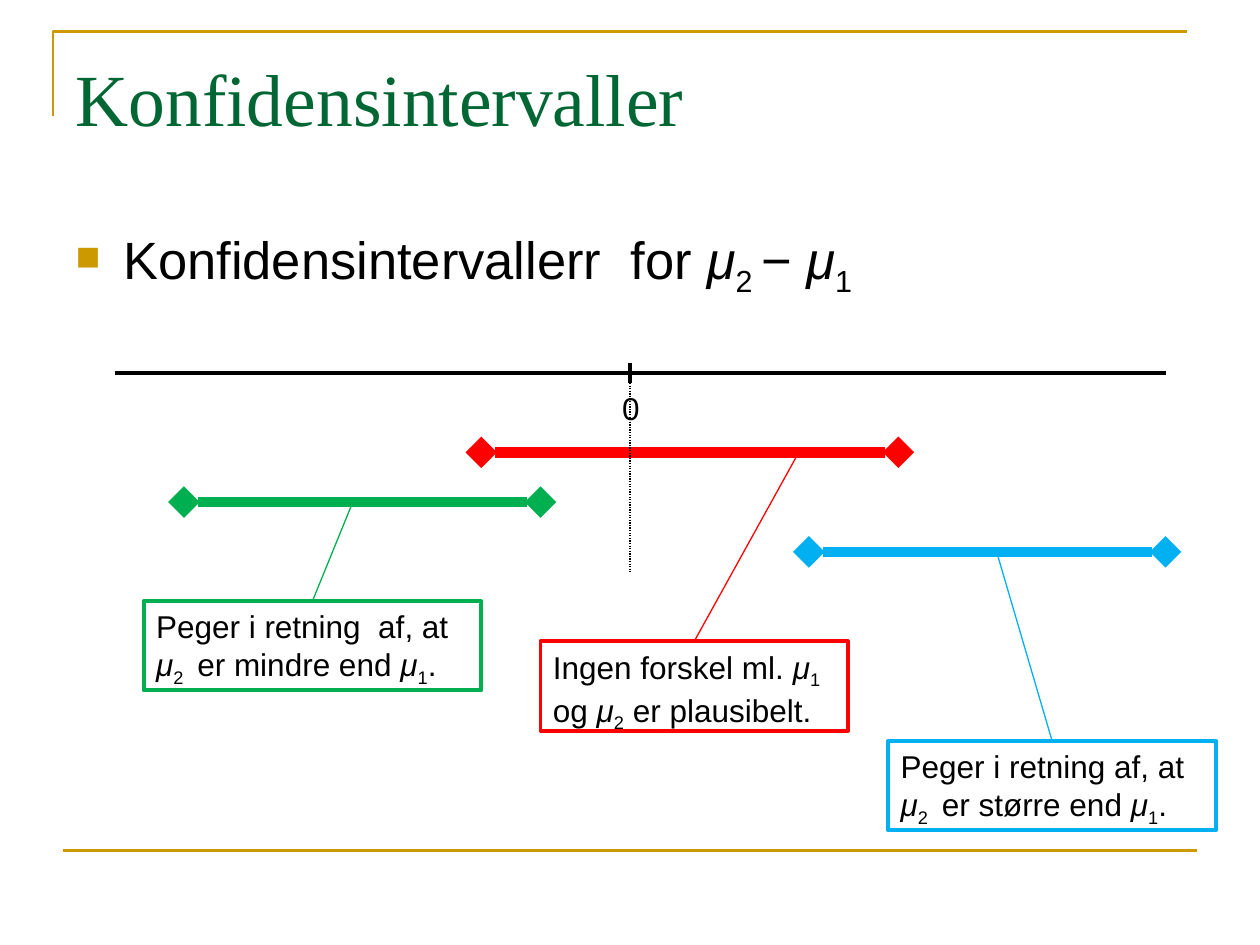
from dataclasses import dataclass

import pptx
import pptx.util
import pptx.dml.color
import pptx.enum.dml
import pptx.enum.shapes
import pptx.enum.text
import pptx.oxml
from pptx.oxml.ns import qn


@dataclass(frozen=True)
class Theme:
    gold: str = "CC9900"
    title: str = "006633"
    ink: str = "000000"
    red: str = "FF0000"
    green: str = "00B050"
    blue: str = "00B0F0"
    title_font: str = "Times New Roman"
    body_font: str = "Arial"
    title_size: int = 42
    bullet_size: int = 30
    label_size: int = 18
    thin: float = 0.75
    rule: float = 1.5
    outline: float = 2.25
    interval: float = 6


THEME = Theme()
WIDTH, HEIGHT = 10, 7.5
MARGIN = 0.05 * WIDTH
AXIS_LEFT, AXIS_RIGHT, AXIS_Y = 0.91, 9.25, 2.96
ZERO_X, TICK = 0.5 * WIDTH, 0.08
FIRST_ROW, ROW_STEP = 3.59, 0.395
BOX_HEIGHT = 0.71

TITLE = "Konfidensintervaller"
MU = ("μ", "italic")
BULLET = [("Konfidensintervallerr  for ", ""), MU, ("2 ", "sub"),
          ("− ", ""), MU, ("1", "sub")]

# One row each: colour, interval ends, leader foot, box left, top, width, text
INTERVALS = [
    (THEME.red, 3.82, 7.13, 6.34, 4.29, 5.09, 2.44,
     [("Ingen forskel ml. ", ""), MU, ("1 ", "sub"), ("og ", ""), MU,
      ("2", "sub"), (" er plausibelt.", "")]),
    (THEME.green, 1.46, 4.29, 2.8, 1.14, 4.77, 2.68,
     [("Peger i retning  af, at ", ""), MU, ("2 ", "sub"),
      (" er mindre end ", ""), MU, ("1", "sub"), (".", "")]),
    (THEME.blue, 6.42, 9.25, 7.91, 7.05, 5.88, 2.6,
     [("Peger i retning af, at ", ""), MU, ("2 ", "sub"),
      (" er større end ", ""), MU, ("1", "sub"), (".", "")]),
]


def inches(*values):
    return [pptx.util.Inches(value) for value in values]


def rgb(colour):
    return pptx.dml.color.RGBColor.from_string(colour)


def format_span(span, size, colour=THEME.ink, font=THEME.body_font):
    span.font.size = pptx.util.Pt(size)
    span.font.name = font
    span.font.color.rgb = rgb(colour)


def write_spans(para, pieces, size):
    """Fill a paragraph with (text, style) pieces, style italic, sub or plain."""
    para.alignment = pptx.enum.text.PP_ALIGN.LEFT
    for text, style in pieces:
        span = para.add_run()
        span.text = text
        format_span(span, size)
        span.font.italic = style == "italic"
        if style == "sub":
            span._r.get_or_add_rPr().set("baseline", "-25000")


def add_line(slide, start, end, colour, width, dash=None, diamonds=False):
    line = slide.shapes.add_connector(
        pptx.enum.shapes.MSO_CONNECTOR.STRAIGHT, *inches(*start, *end))
    line.line.color.rgb = rgb(colour)
    line.line.width = pptx.util.Pt(width)
    if dash:
        line.line.dash_style = dash
    if diamonds:
        for tag in ("a:headEnd", "a:tailEnd"):
            pptx.oxml.xmlchemy.OxmlElement(tag)
            marker = pptx.oxml.xmlchemy.OxmlElement(tag)
            marker.set("type", "diamond")
            line.line._get_or_add_ln().append(marker)
    line._element.spPr.append(pptx.oxml.xmlchemy.OxmlElement("a:effectLst"))
    return line


def add_frame(slide):
    builder = slide.shapes.build_freeform(*inches(0.42, 0.92), scale=1.0)
    builder.add_line_segments(
        [inches(0.42, 0.25), inches(9.42, 0.25)], close=False)
    corner = builder.convert_to_shape()
    corner.shadow.inherit = False
    corner.fill.background()
    corner.line.color.rgb = rgb(THEME.gold)
    corner.line.width = pptx.util.Pt(THEME.rule)
    bottom = 0.9 * HEIGHT
    add_line(slide, (MARGIN, bottom), (WIDTH - MARGIN, bottom),
             THEME.gold, THEME.rule)


def add_title(slide):
    title = slide.shapes.title
    title.left, title.top, title.width, title.height = inches(
        MARGIN, 0.3, WIDTH - 2 * MARGIN, 1.25)
    frame = title.text_frame
    frame.text = TITLE
    frame.vertical_anchor = pptx.enum.text.MSO_ANCHOR.TOP
    frame.margin_top = pptx.util.Inches(0.12)
    para = frame.paragraphs[0]
    para.alignment = pptx.enum.text.PP_ALIGN.LEFT
    format_span(para.runs[0], THEME.title_size, THEME.title, THEME.title_font)


def add_bullet(slide):
    box = slide.shapes.add_textbox(
        *inches(MARGIN, 1.75, WIDTH - 2 * MARGIN, 4.95))
    box.text_frame.word_wrap = True
    para = box.text_frame.paragraphs[0]
    write_spans(para, BULLET, THEME.bullet_size)
    para.space_before = pptx.util.Pt(0.2 * THEME.bullet_size)
    properties = para._p.get_or_add_pPr()
    indent = pptx.util.Inches(0.38)
    properties.set("marL", str(indent))
    properties.set("indent", str(-indent))
    colour = pptx.oxml.xmlchemy.OxmlElement("a:buClr")
    shade = pptx.oxml.xmlchemy.OxmlElement("a:srgbClr")
    shade.set("val", THEME.gold)
    colour.append(shade)
    size = pptx.oxml.xmlchemy.OxmlElement("a:buSzPct")
    size.set("val", "65000")
    symbol = pptx.oxml.xmlchemy.OxmlElement("a:buChar")
    symbol.set("char", "■")
    properties.extend([colour, size, symbol])


def add_axis(slide):
    add_line(slide, (AXIS_LEFT, AXIS_Y), (AXIS_RIGHT, AXIS_Y),
             THEME.ink, THEME.outline)
    add_line(slide, (ZERO_X, AXIS_Y - TICK), (ZERO_X, AXIS_Y + TICK),
             THEME.ink, THEME.outline)
    label = slide.shapes.add_textbox(*inches(4.84, AXIS_Y + TICK, 0.34, 0.4))
    label.text_frame.word_wrap = False
    write_spans(label.text_frame.paragraphs[0], [("0", "")], THEME.label_size)


def add_interval(slide, row, colour, low, high, foot, left, top, width, pieces):
    y = FIRST_ROW + row * ROW_STEP
    add_line(slide, (low, y), (high, y), colour, THEME.interval, diamonds=True)
    box = slide.shapes.add_shape(
        pptx.enum.shapes.MSO_SHAPE.RECTANGLE,
        *inches(left, top, width, BOX_HEIGHT))
    box.shadow.inherit = False
    box.fill.background()
    box.line.color.rgb = rgb(colour)
    box.line.width = pptx.util.Pt(THEME.outline)
    box.text_frame.word_wrap = True
    box.text_frame.vertical_anchor = pptx.enum.text.MSO_ANCHOR.TOP
    write_spans(box.text_frame.paragraphs[0], pieces, THEME.label_size)
    leader = add_line(slide, (left + width / 2, top), (foot, y),
                      colour, THEME.thin)
    leader.begin_connect(box, 0)


def main():
    deck = pptx.Presentation()
    deck.slide_width, deck.slide_height = inches(WIDTH, HEIGHT)
    page = deck.slides.add_slide(deck.slide_layouts[5])
    add_frame(page)
    add_title(page)
    add_bullet(page)
    add_axis(page)
    for row, interval in enumerate(INTERVALS):
        add_interval(page, row, *interval)
    add_line(page, (ZERO_X, AXIS_Y + TICK), (ZERO_X, 4.54), THEME.ink,
             THEME.thin, dash=pptx.enum.dml.MSO_LINE.ROUND_DOT)
    deck.save("out.pptx")


if __name__ == "__main__":
    main()
